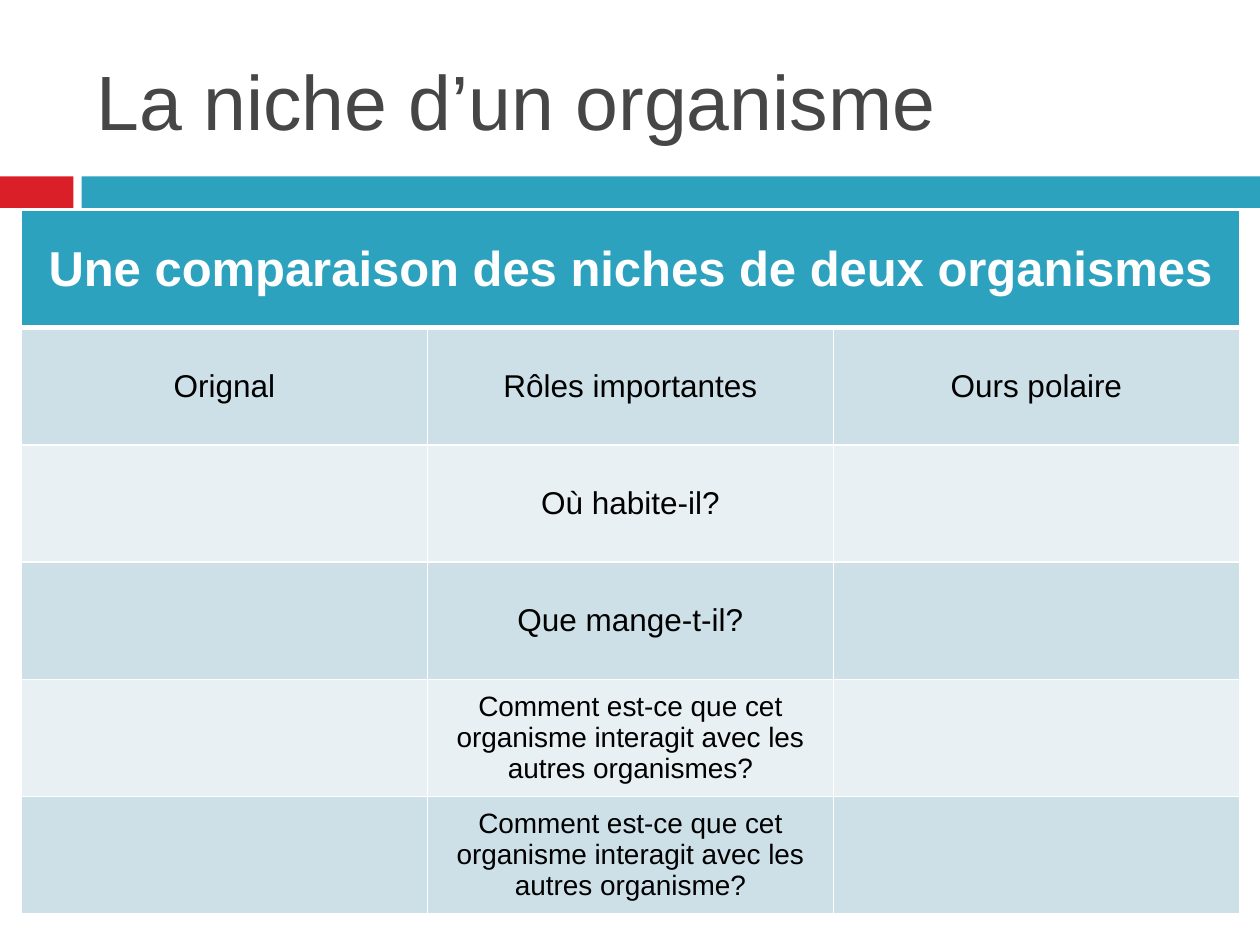
from dataclasses import dataclass

from lxml import etree
from pptx import Presentation
from pptx import util as u
from pptx.dml.color import RGBColor
from pptx.enum import shapes, text
from pptx.oxml.ns import qn


@dataclass(frozen=True)
class Theme:
    font: str = "Arial"
    red: str = "DA1F28"
    teal: str = "2DA2BF"
    grey: str = "464646"
    white: str = "FFFFFF"
    black: str = "000000"
    bands: tuple = ("CDE0E8", "E8F0F4")
    title: int = 44
    head: int = 28
    body: int = 18
    small: int = 16


class Deck:
    def __init__(self, theme, wide, high):
        self.theme = theme
        self.prs = Presentation()
        self.prs.slide_width, self.prs.slide_height = u.Pt(wide), u.Pt(high)
        self.slide = self.prs.slides.add_slide(self.prs.slide_layouts[5])

    def paint(self, item, color):
        item.fill.solid()
        item.fill.fore_color.rgb = RGBColor.from_string(color)

    def label(self, frame, words, size, color, align, bold=False):
        para = frame.paragraphs[0]
        para.alignment = align
        run = para.add_run()
        run.text = words
        font = run.font
        font.name, font.size, font.bold = self.theme.font, u.Pt(size), bold
        font.color.rgb = RGBColor.from_string(color)

    def title(self, words, x, y, w, h):
        box = self.slide.shapes.title
        box.left, box.top, box.width, box.height = map(u.Pt, (x, y, w, h))
        frame = box.text_frame
        frame.word_wrap = True
        frame.auto_size = text.MSO_AUTO_SIZE.NONE
        frame.vertical_anchor = text.MSO_ANCHOR.MIDDLE
        self.label(frame, words, self.theme.title, self.theme.grey,
                   text.PP_ALIGN.LEFT)

    def bar(self, x, y, w, h, color):
        bar = self.slide.shapes.add_shape(
            shapes.MSO_SHAPE.RECTANGLE, *map(u.Pt, (x, y, w, h)))
        bar.shadow.inherit = False
        bar.line.fill.background()
        self.paint(bar, color)

    def edge(self, cell, **widths):
        """Draw cell borders; widths are points keyed by L, R, T, B in that order."""
        props = cell._tc.get_or_add_tcPr()
        for side, width in widths.items():
            line = etree.SubElement(props, qn("a:ln" + side), w=str(u.Pt(width)))
            fill = etree.SubElement(line, qn("a:solidFill"))
            etree.SubElement(fill, qn("a:srgbClr"), val=self.theme.white)

    def table(self, head, rows, x, y, w, h):
        """Each row is a list of (words, size) pairs, under one merged heading."""
        look = self.theme
        cols = len(rows[0])
        grid = self.slide.shapes.add_table(
            len(rows) + 1, cols, *map(u.Pt, (x, y, w, h))).table
        grid.horz_banding = grid.first_row = False
        grid.cell(0, 0).merge(grid.cell(0, cols - 1))
        for col in range(cols):
            cell = grid.cell(0, col)
            self.edge(cell, L=1, R=1, T=1, B=3)
            self.paint(cell, look.teal)
        top = grid.cell(0, 0)
        top.vertical_anchor = text.MSO_ANCHOR.MIDDLE
        self.label(top.text_frame, head, look.head, look.white,
                   text.PP_ALIGN.CENTER, True)
        for i, row in enumerate(rows):
            for j, (words, size) in enumerate(row):
                cell = grid.cell(i + 1, j)
                self.edge(cell, L=1, R=1, T=3 if i == 0 else 1, B=1)
                self.paint(cell, look.bands[i % 2])
                cell.vertical_anchor = text.MSO_ANCHOR.MIDDLE
                if words:
                    self.label(cell.text_frame, words, size, look.black,
                               text.PP_ALIGN.CENTER)


def main():
    look = Theme()
    deck = Deck(look, 720, 540)
    deck.bar(0, 100.8, 42, 18, look.red)
    deck.bar(46.6, 100.8, 673.4, 18, look.teal)
    deck.title("La niche d’un organisme", 48, 18, 642, 78)

    names = ("Orignal", "Rôles importantes", "Ours polaire")
    roles = (
        ("Où habite-il?", look.body),
        ("Que mange-t-il?", look.body),
        ("Comment est-ce que cet organisme interagit avec les "
         "autres organismes?", look.small),
        ("Comment est-ce que cet organisme interagit avec les "
         "autres organisme?", look.small),
    )
    blank = ("", look.body)
    rows = [[(name, look.body) for name in names]]
    rows += [[blank, role, blank] for role in roles]
    deck.table("Une comparaison des niches de deux organismes", rows,
               12.24, 120.24, 696, 402)
    deck.prs.save("out.pptx")


if __name__ == "__main__":
    main()
